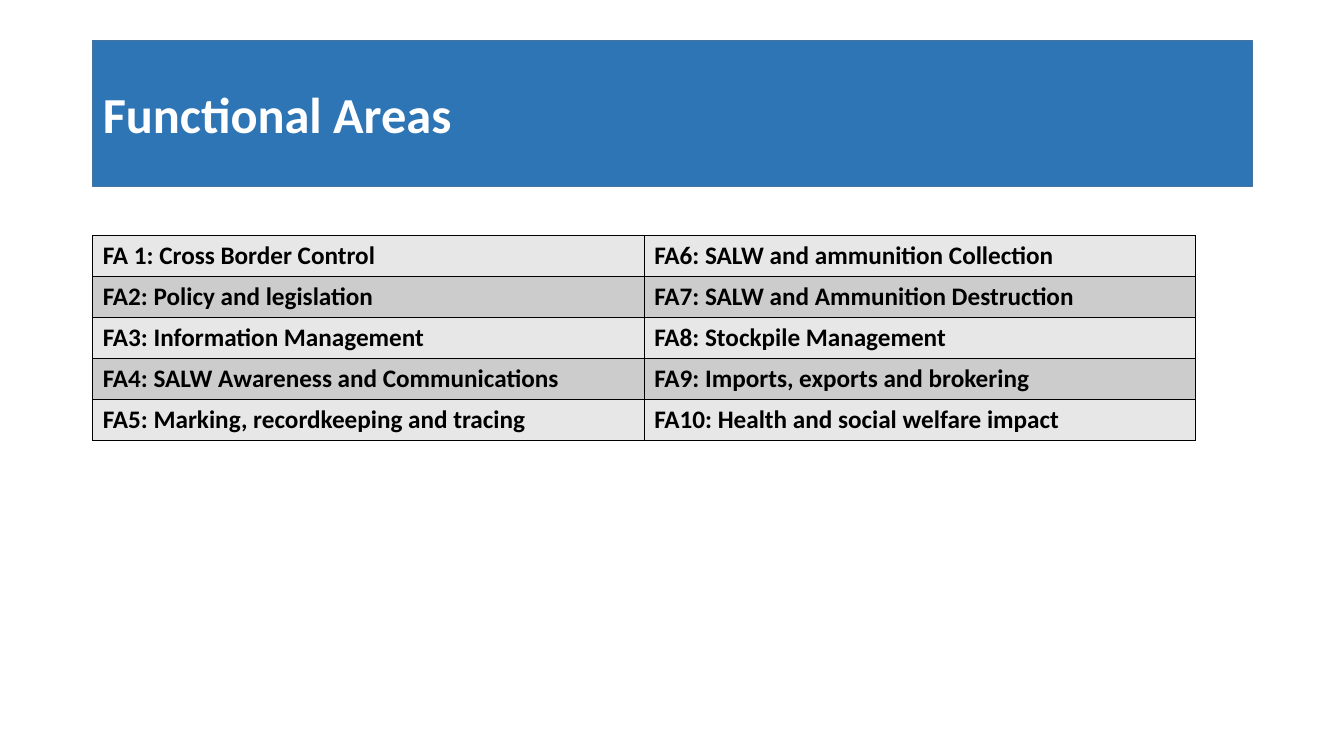
import dataclasses

import lxml.etree
import pptx
import pptx.dml.color
import pptx.enum.text
import pptx.oxml.ns
import pptx.slide
import pptx.table
import pptx.text.text
import pptx.util

Inches = pptx.util.Inches
FONT = "Calibri"
COLORS = {
    "band": "2E75B6",
    "edge": "43739E",
    "title": "FFFFFF",
    "text": "000000",
    "grid": "000000",
    "light": "E7E7E7",
    "dark": "CCCCCC",
}
LEFT = 0.92
COL_WIDTH = 5.47
ROW_HEIGHT = 0.4


@dataclasses.dataclass
class AreaRow:
    first: str
    second: str


AREAS = [
    AreaRow("FA 1: Cross Border Control", "FA6: SALW and ammunition Collection"),
    AreaRow("FA2: Policy and legislation", "FA7: SALW and Ammunition Destruction"),
    AreaRow("FA3: Information Management", "FA8: Stockpile Management"),
    AreaRow("FA4: SALW Awareness and Communications", "FA9: Imports, exports and brokering"),
    AreaRow("FA5: Marking, recordkeeping and tracing", "FA10: Health and social welfare impact"),
]


def color(name: str) -> pptx.dml.color.RGBColor:
    return pptx.dml.color.RGBColor.from_string(COLORS[name])


def write(frame: pptx.text.text.TextFrame, text: str, size: int, ink: str) -> None:
    """Set one bold, left-aligned line of text."""
    frame.text = text
    line = frame.paragraphs[0]
    line.alignment = pptx.enum.text.PP_ALIGN.LEFT
    font = line.runs[0].font
    font.name = FONT
    font.size = pptx.util.Pt(size)
    font.bold = True
    font.color.rgb = color(ink)


def add_borders(cell: pptx.table._Cell) -> None:
    props = cell._tc.get_or_add_tcPr()
    qn = pptx.oxml.ns.qn
    for place, side in enumerate(("lnL", "lnR", "lnT", "lnB")):
        line = lxml.etree.Element(qn(f"a:{side}"), w=str(pptx.util.Pt(1)))
        fill = lxml.etree.SubElement(line, qn("a:solidFill"))
        lxml.etree.SubElement(fill, qn("a:srgbClr"), val=COLORS["grid"])
        props.insert(place, line)


def add_title(slide: pptx.slide.Slide) -> None:
    title = slide.shapes.title
    title.left, title.top = Inches(LEFT), Inches(0.4)
    title.width, title.height = Inches(11.5), Inches(1.45)
    title.fill.solid()
    title.fill.fore_color.rgb = color("band")
    title.line.color.rgb = color("edge")
    title.line.width = pptx.util.Pt(1)
    frame = title.text_frame
    frame.auto_size = pptx.enum.text.MSO_AUTO_SIZE.NONE
    frame.vertical_anchor = pptx.enum.text.MSO_ANCHOR.MIDDLE
    write(frame, "Functional Areas", 36, "title")


def add_areas(slide: pptx.slide.Slide) -> None:
    table = slide.shapes.add_table(
        len(AREAS), 2, Inches(LEFT), Inches(2.34),
        Inches(2 * COL_WIDTH), Inches(len(AREAS) * ROW_HEIGHT),
    ).table
    for index, area in enumerate(AREAS):
        for cell, text in zip(table.rows[index].cells, dataclasses.astuple(area)):
            write(cell.text_frame, text, 18, "text")
            cell.fill.solid()
            cell.fill.fore_color.rgb = color("dark" if index % 2 else "light")
            add_borders(cell)


def main() -> None:
    deck = pptx.Presentation()
    deck.slide_width, deck.slide_height = Inches(13.33), Inches(7.5)
    slide = deck.slides.add_slide(deck.slide_layouts.get_by_name("Title Only"))
    add_title(slide)
    add_areas(slide)
    deck.save("out.pptx")


if __name__ == "__main__":
    main()
